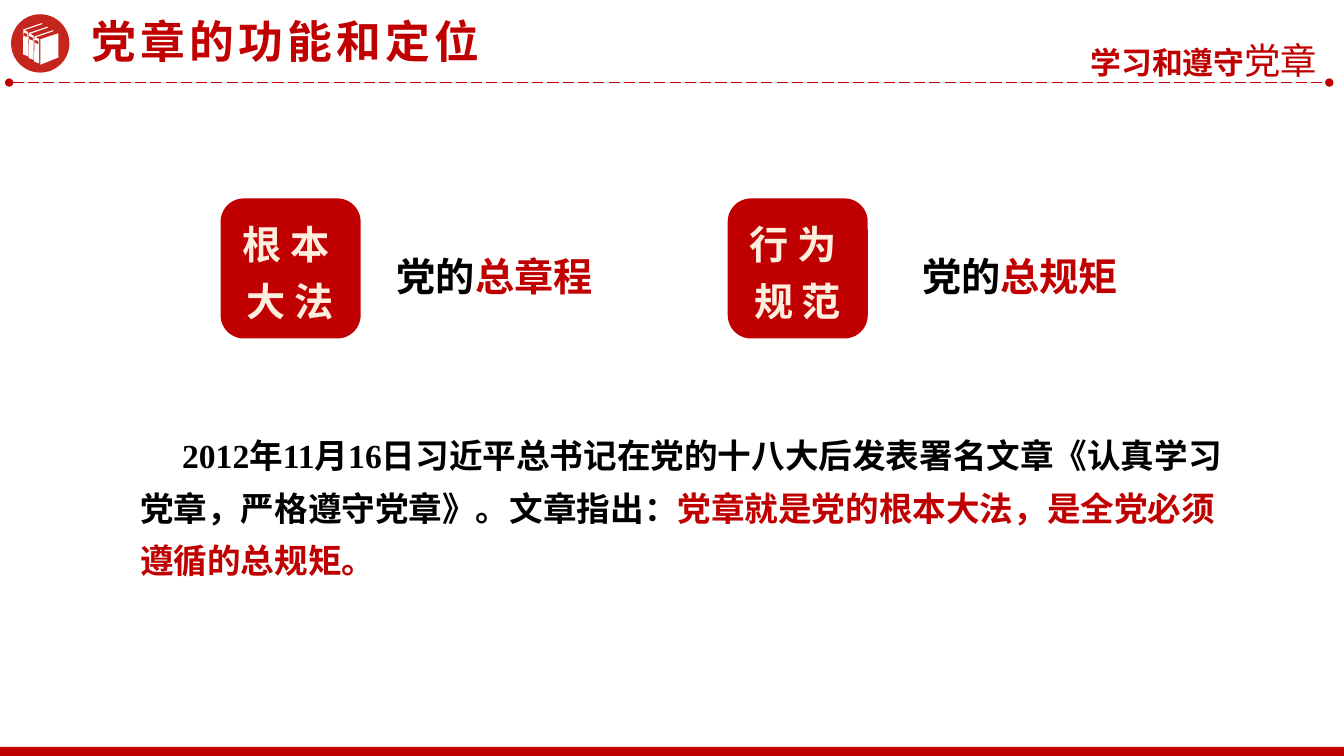
from dataclasses import dataclass
from typing import Any

from lxml.etree import SubElement
from pptx import Presentation
from pptx.dml.color import RGBColor
from pptx.enum.dml import MSO_LINE_DASH_STYLE as Dash
from pptx.enum.shapes import MSO_CONNECTOR, MSO_SHAPE
from pptx.enum.text import MSO_ANCHOR, MSO_AUTO_SIZE, PP_ALIGN
from pptx.oxml.ns import qn
from pptx.util import Cm, Pt

RED = RGBColor(0xC0, 0x00, 0x00)
ICON_RED = RGBColor(0xC4, 0x26, 0x1D)
CREAM = RGBColor(0xFE, 0xEE, 0xDE)
BLACK = RGBColor(0x00, 0x00, 0x00)
WHITE = RGBColor(0xFF, 0xFF, 0xFF)

SERIF = "Times New Roman"
SANS = "Noto Sans CJK SC"

# Book icon outlines, in hundredths of a centimetre
COVER = [(102, 99), (102, 163), (147, 145), (147, 84)]
SPINE = [(106, 58), (59, 74), (58, 137), (71, 142), (71, 81), (62, 76), (106, 61)]
SPINE_LABEL = [(58, 81), (58, 89), (69, 94), (69, 86)]
BOOK_STEP = (14, 9)
BOOK_COUNT = 3


@dataclass(frozen=True)
class Box:
    left: float
    top: float
    width: float
    height: float

    def lengths(self) -> tuple[Cm, Cm, Cm, Cm]:
        return Cm(self.left), Cm(self.top), Cm(self.width), Cm(self.height)


@dataclass(frozen=True)
class Span:
    text: str
    size: float
    color: RGBColor
    bold: bool = True
    font: str = SERIF
    spacing: float = 0


@dataclass(frozen=True)
class Role:
    name: str
    tile_left: float
    label_left: float
    label_end: str


ROLES = [
    Role("根本大法", 5.56, 9.75, "总章程"),
    Role("行为规范", 18.34, 22.99, "总规矩"),
]


def set_attributes(target: Any, values: dict[str, Any]) -> None:
    for name, value in values.items():
        setattr(target, name, value)


def write_text(shape: Any, spans: list[Span], wrap: bool = True,
               indent: float = 0, **paragraph_format: Any) -> None:
    frame = shape.text_frame
    set_attributes(frame, {
        "word_wrap": wrap,
        "auto_size": MSO_AUTO_SIZE.SHAPE_TO_FIT_TEXT,
        "vertical_anchor": MSO_ANCHOR.TOP,
    })
    paragraph = frame.paragraphs[0]
    set_attributes(paragraph, {"alignment": PP_ALIGN.LEFT} | paragraph_format)
    if indent:
        paragraph._p.get_or_add_pPr().set("indent", str(Cm(indent)))
    for span in spans:
        run = paragraph.add_run()
        run.text = span.text
        set_attributes(run.font, {
            "size": Pt(span.size), "bold": span.bold, "name": span.font,
        })
        run.font.color.rgb = span.color
        properties = run._r.get_or_add_rPr()
        SubElement(properties, qn("a:ea")).set("typeface", SANS)
        if span.spacing:
            properties.set("spc", str(round(span.spacing * 100)))


def add_text(shapes: Any, box: Box, spans: list[Span], **text_format: Any) -> None:
    write_text(shapes.add_textbox(*box.lengths()), spans, **text_format)


def paint(shape: Any, color: RGBColor) -> None:
    shape.shadow.inherit = False
    shape.fill.solid()
    shape.fill.fore_color.rgb = color
    shape.line.fill.background()


def add_filled(shapes: Any, kind: MSO_SHAPE, box: Box, color: RGBColor) -> None:
    paint(shapes.add_shape(kind, *box.lengths()), color)


def add_header_line(shapes: Any) -> None:
    connector = shapes.add_connector(
        MSO_CONNECTOR.STRAIGHT, Cm(0.23), Cm(2.08), Cm(33.5), Cm(2.08))
    connector.line.color.rgb = RED
    set_attributes(connector.line, {"width": Pt(1), "dash_style": Dash.LONG_DASH})
    line = connector.line._get_or_add_ln()
    for end in ("a:headEnd", "a:tailEnd"):
        SubElement(line, qn(end)).set("type", "oval")
    SubElement(connector._element.spPr, qn("a:effectLst"))


def add_book_icon(shapes: Any) -> None:
    """Draw three books, each one step right and down from the last, on a disc."""
    group = shapes.add_group_shape()
    add_filled(group.shapes, MSO_SHAPE.OVAL, Box(0.28, 0.36, 1.47, 1.47), ICON_RED)
    step_x, step_y = BOOK_STEP
    builder = group.shapes.build_freeform(*COVER[0], scale=Cm(1) / 100)
    builder.add_line_segments(COVER[1:], close=True)
    for book in range(BOOK_COUNT):
        for outline in (SPINE, SPINE_LABEL):
            points = [(x + book * step_x, y + book * step_y) for x, y in outline]
            builder.move_to(*points[0])
            builder.add_line_segments(points[1:], close=True)
    paint(builder.convert_to_shape(), WHITE)


def add_role(shapes: Any, role: Role) -> None:
    """Draw a red tile with the role's name and the label beside it."""
    add_text(shapes, Box(role.label_left, 5.99, 5.99, 1.57),
             [Span("党的", 28, BLACK), Span(role.label_end, 28, RED)],
             line_spacing=1.2)
    tile = shapes.add_group_shape().shapes
    add_filled(tile, MSO_SHAPE.ROUNDED_RECTANGLE,
               Box(role.tile_left, 5, 3.53, 3.53), RED)
    add_text(tile, Box(role.tile_left + 0.23, 5.2, 3.05, 3),
             [Span(role.name, 28, CREAM, spacing=6)],
             alignment=PP_ALIGN.CENTER, line_spacing=1.2)


def main() -> None:
    presentation = Presentation()
    set_attributes(presentation, {"slide_width": Cm(33.87), "slide_height": Cm(19.05)})
    slide = presentation.slides.add_slide(presentation.slide_layouts[5])
    shapes = slide.shapes

    add_header_line(shapes)
    add_text(shapes, Box(26.92, 0.84, 6.53, 1.37),
             [Span("学习和遵守", 22, RED, font=SANS),
              Span("党章", 26, RED, bold=False, font=SANS)],
             wrap=False, alignment=PP_ALIGN.RIGHT)
    add_book_icon(shapes)
    add_filled(shapes, MSO_SHAPE.RECTANGLE, Box(0, 18.82, 33.87, 0.23), RED)

    title = shapes.title
    title_box = Box(2.06, 0.23, 10.49, 1.63)
    set_attributes(title, dict(zip(("left", "top", "width", "height"),
                                   title_box.lengths())))
    write_text(title, [Span("党章的功能和定位", 32, RED, spacing=3)], wrap=False)

    add_text(shapes, Box(3.28, 10.54, 27.91, 4.27),
             [Span("2012年11月16日习近平总书记在党的十八大后发表署名文章"
                   "《认真学习党章，严格遵守党章》。文章指出：", 24, BLACK),
              Span("党章就是党的根本大法，是全党必须遵循的总规矩。", 24, RED)],
             indent=1.06, line_spacing=1.3)
    for role in ROLES:
        add_role(shapes, role)

    presentation.save("out.pptx")


if __name__ == "__main__":
    main()
